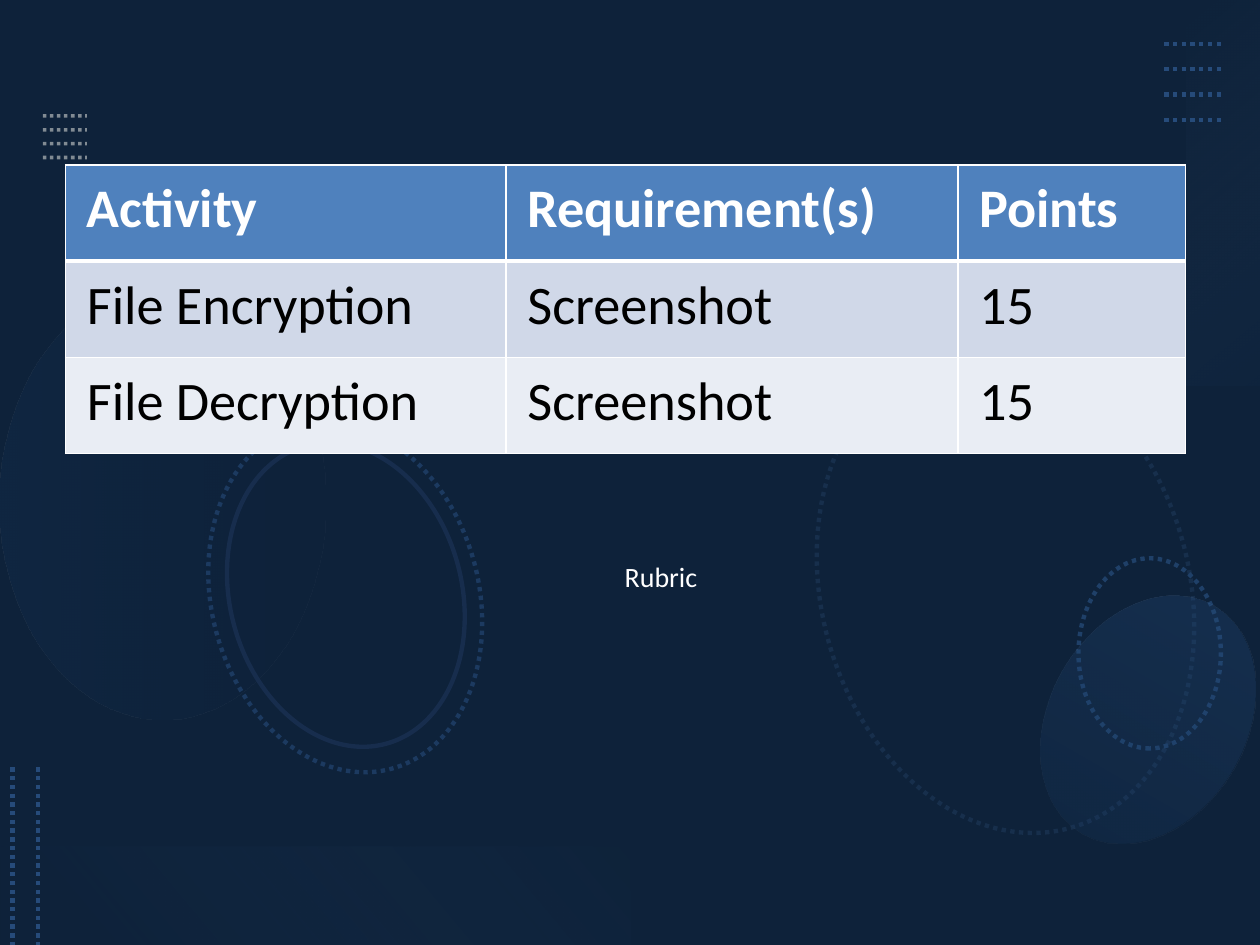
from lxml import etree
from pptx import Presentation, util as u
from pptx.dml.color import RGBColor
from pptx.enum import dml, shapes, text
from pptx.oxml import ns

WIDE, HIGH = 10, 7.5
FONT = "Calibri"
NAVY, DEEP, MID, SKY = "1F497D", "0F243E", "17375E", "558ED5"
WHITE, BLACK, HEAD = "FFFFFF", "000000", "4F81BD"
BANDS = ["D0D8E8", "E9EDF4"]
FULL = (0, 0, WIDE, HIGH)


def hue(code):
    return RGBColor.from_string(code)


def inch(*nums):
    return [u.Inches(n) for n in nums]


def fade(node, share):
    """Give the colour inside an XML node an opacity in percent."""
    for tone in node.iter(ns.qn("a:srgbClr")):
        etree.SubElement(tone, ns.qn("a:alpha"), val=str(share * 1000))


def stroke(line, code, width, dots=True):
    line.color.rgb = hue(code)
    line.width = u.Pt(width)
    if dots:
        line.dash_style = dml.MSO_LINE.ROUND_DOT


def shape(slide, kind, box, turn=0, fill=None, share=100):
    item = slide.shapes.add_shape(kind, *inch(*box))
    item.shadow.inherit = False
    item.rotation = turn
    item.line.fill.background()
    if fill:
        item.fill.solid()
        item.fill.fore_color.rgb = hue(fill)
        fade(item.fill._xPr, share)
    else:
        item.fill.background()
    return item


def blend(item, stops, angle):
    """Fill with a gradient; each stop is place, colour and opacity."""
    item.fill.gradient()
    item.fill.gradient_angle = 360 - angle
    for stop, (place, code, share) in zip(item.fill.gradient_stops, stops):
        stop.position = place
        stop.color.rgb = hue(code)
        fade(stop._gs, share)


def write(frame, words, size=16, code=WHITE, bold=False, before=0, hang=0):
    frame.word_wrap = True
    par = frame.paragraphs[0]
    par.space_before = u.Pt(before)
    if hang:
        props = par._p.get_or_add_pPr()
        props.set("marL", str(u.Inches(hang)))
        props.set("indent", str(-u.Inches(hang)))
    run = par.add_run()
    run.text = words
    run.font.name, run.font.size, run.font.bold = FONT, u.Pt(size), bold
    run.font.color.rgb = hue(code)


def rows(slide, box, count, code, width=2.5, share=100, down=False):
    """Evenly spaced dotted lines that fill a box, across or down."""
    left, top, wide, high = box
    for i in range(count):
        step = i / (count - 1)
        if down:
            ends = (left + wide * step, top, left + wide * step, top + high)
        else:
            ends = (left, top + high * step, left + wide, top + high * step)
        line = slide.shapes.add_connector(shapes.MSO_CONNECTOR.STRAIGHT, *inch(*ends))
        stroke(line.line, code, width)
        fade(line.line._ln, share)
        etree.SubElement(line._element.spPr, ns.qn("a:effectLst"))


def rings(slide, items):
    for box, turn, code, dots in items:
        ring = shape(slide, shapes.MSO_SHAPE.OVAL, box, turn)
        stroke(ring.line, code, 2.5, dots)


def glow(slide, kind, box, turn, stops, angle=90):
    blend(shape(slide, kind, box, turn), stops, angle)


def decor(slide, box):
    left, top, wide, high = box
    oval, rect = shapes.MSO_SHAPE.OVAL, shapes.MSO_SHAPE.RECTANGLE
    disc = (left + 8.33, top + 4.67, 1.56, 2.08)

    # Dark ground
    shape(slide, rect, box, fill=NAVY)
    shape(slide, rect, box, fill=BLACK, share=53)

    # Rings and discs
    rings(slide, [((left + 6.03, top + 3.23, 3.9, 2.92), 75, "172F4C", True),
                  ((left + 8.37, top + 4.62, 1.51, 1.13), 270, "1F4068", True)])
    glow(slide, oval, (left - 0.43, top + 2.7, 3.44, 2.58), 270,
         [(0, MID, 20), (1, DEEP, 10)])
    glow(slide, oval, disc, 210, [(0, MID, 10), (1, MID, 20)])
    rings(slide, [((left + 1.33, top + 3.68, 2.82, 2.12), 75, "1C3A60", True),
                  ((left + 1.52, top + 3.8, 2.45, 1.84), 75, "172D4D", False)])

    # Faint bands and dotted lines at the edges
    glow(slide, rect, (left + 8.18, top + 1.24, 3.06, 0.58), 270,
         [(0, "8EB4E3", 0), (1, MID, 10)], 140)
    rows(slide, (left + 9.24, top + 0.35, 0.45, 0.6), 4, "264B7A")
    glow(slide, rect, (left, top + high - 0.78, wide / 2, 0.78), 180,
         [(0.1, DEEP, 10), (1, SKY, 0)], 140)
    rows(slide, (left + 0.1, top + 6.09, 0.2, high - 6.09), 2, "264B7A", down=True)
    rows(slide, (left + 0.34, top + 0.92, 0.35, 0.33), 4, "F5F4ED", 2, 50)
    glow(slide, oval, disc, 210, [(0, MID, 10), (1, SKY, 10)])


def label(slide, box, words):
    frame = slide.shapes.add_textbox(*inch(*box)).text_frame
    frame.vertical_anchor = text.MSO_ANCHOR.TOP
    write(frame, words, before=3.2, hang=0.38)


def edge(cell, widths):
    """Draw white borders: left, right, top, bottom widths in points."""
    props = cell._tc.get_or_add_tcPr()
    for i, (side, width) in enumerate(zip("LRTB", widths)):
        line = etree.Element(ns.qn(f"a:ln{side}"), w=str(u.Pt(width)))
        fill = etree.SubElement(line, ns.qn("a:solidFill"))
        etree.SubElement(fill, ns.qn("a:srgbClr"), val=WHITE)
        props.insert(i, line)


def rubric(slide, box, shares, data):
    grid = slide.shapes.add_table(len(data), len(shares), *inch(*box)).table
    for col, share in zip(grid.columns, shares):
        col.width = u.Inches(box[2] * share / sum(shares))
    for r, line in enumerate(data):
        top = r == 0
        for c, words in enumerate(line):
            cell = grid.cell(r, c)
            cell.margin_left = cell.margin_right = u.Inches(0.17)
            cell.margin_top = cell.margin_bottom = u.Inches(0.09)
            cell.fill.solid()
            cell.fill.fore_color.rgb = hue(HEAD if top else BANDS[(r - 1) % 2])
            edge(cell, (1, 1, 3 if r == 1 else 1, 3 if top else 1))
            write(cell.text_frame, words, 31, WHITE if top else BLACK, top)


def main():
    deck = Presentation()
    deck.slide_width, deck.slide_height = inch(WIDE, HIGH)
    slide = deck.slides.add_slide(deck.slide_layouts[6])
    decor(slide, FULL)
    label(slide, (4.86, 4.39, 4.55, 2.33), "Rubric")
    rubric(slide, (0.52, 1.31, 8.89, 2.29), (3.5, 3.59, 1.81), [
        ("Activity", "Requirement(s)", "Points"),
        ("File Encryption", "Screenshot", "15"),
        ("File Decryption", "Screenshot", "15"),
    ])
    deck.save("out.pptx")


if __name__ == "__main__":
    main()
